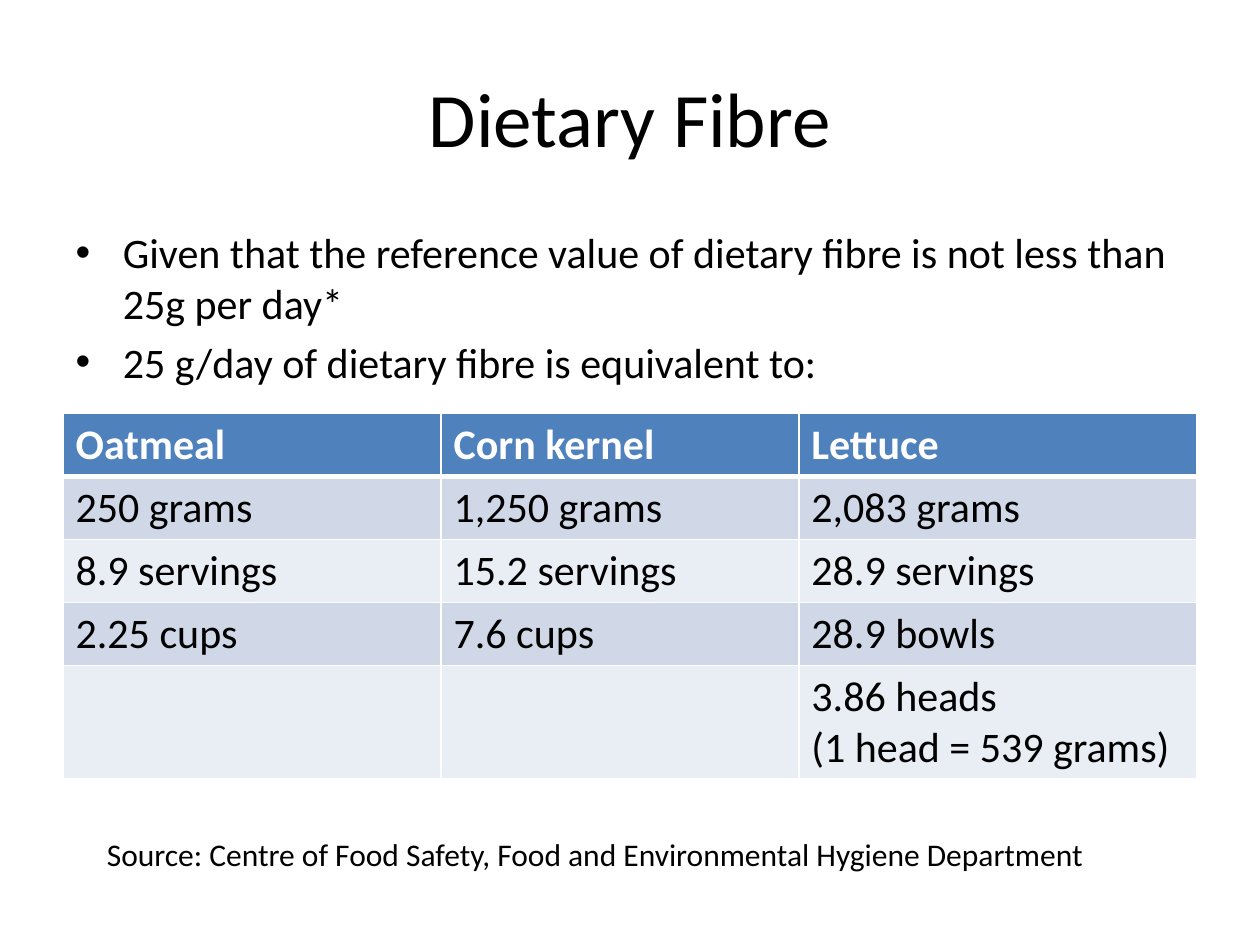
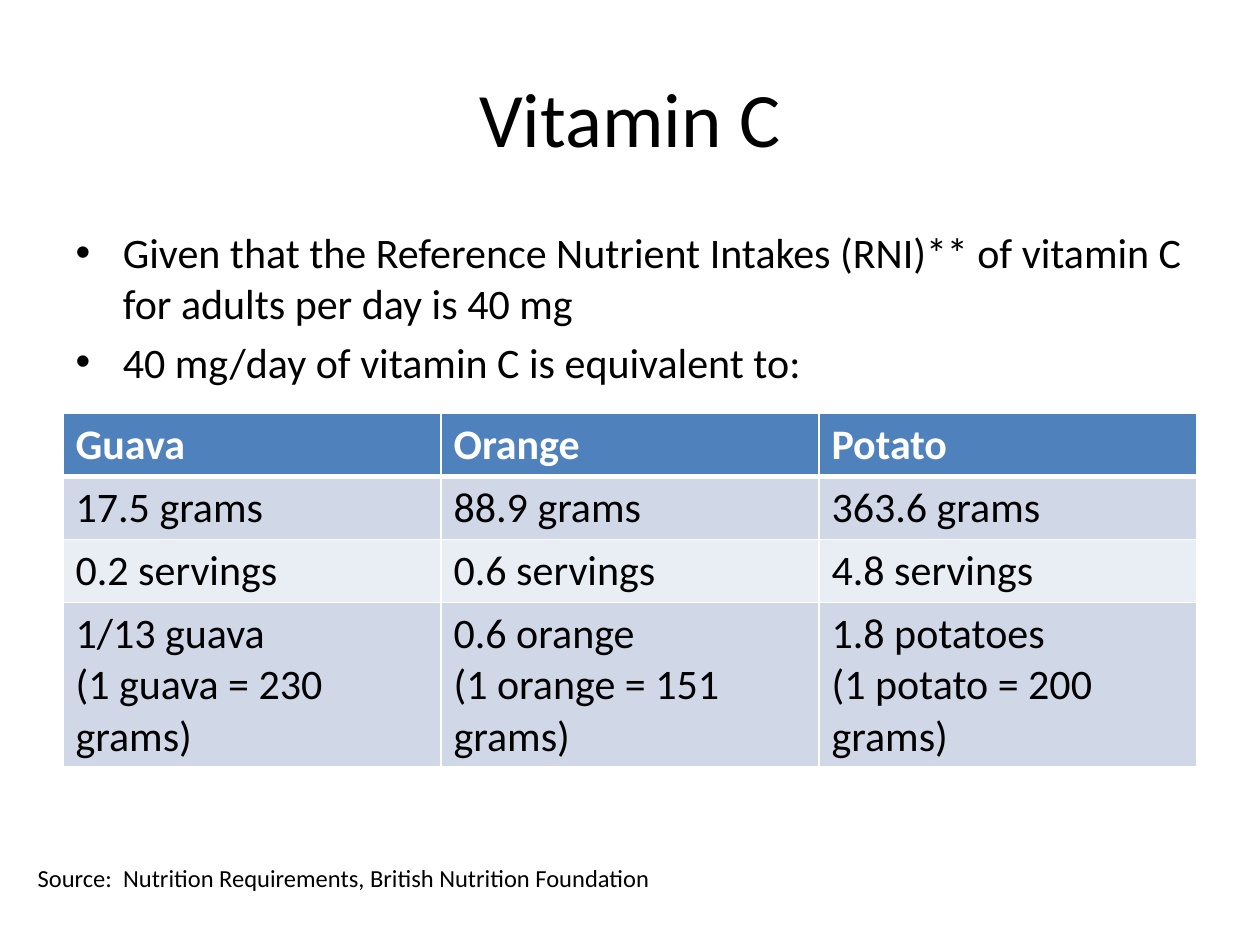
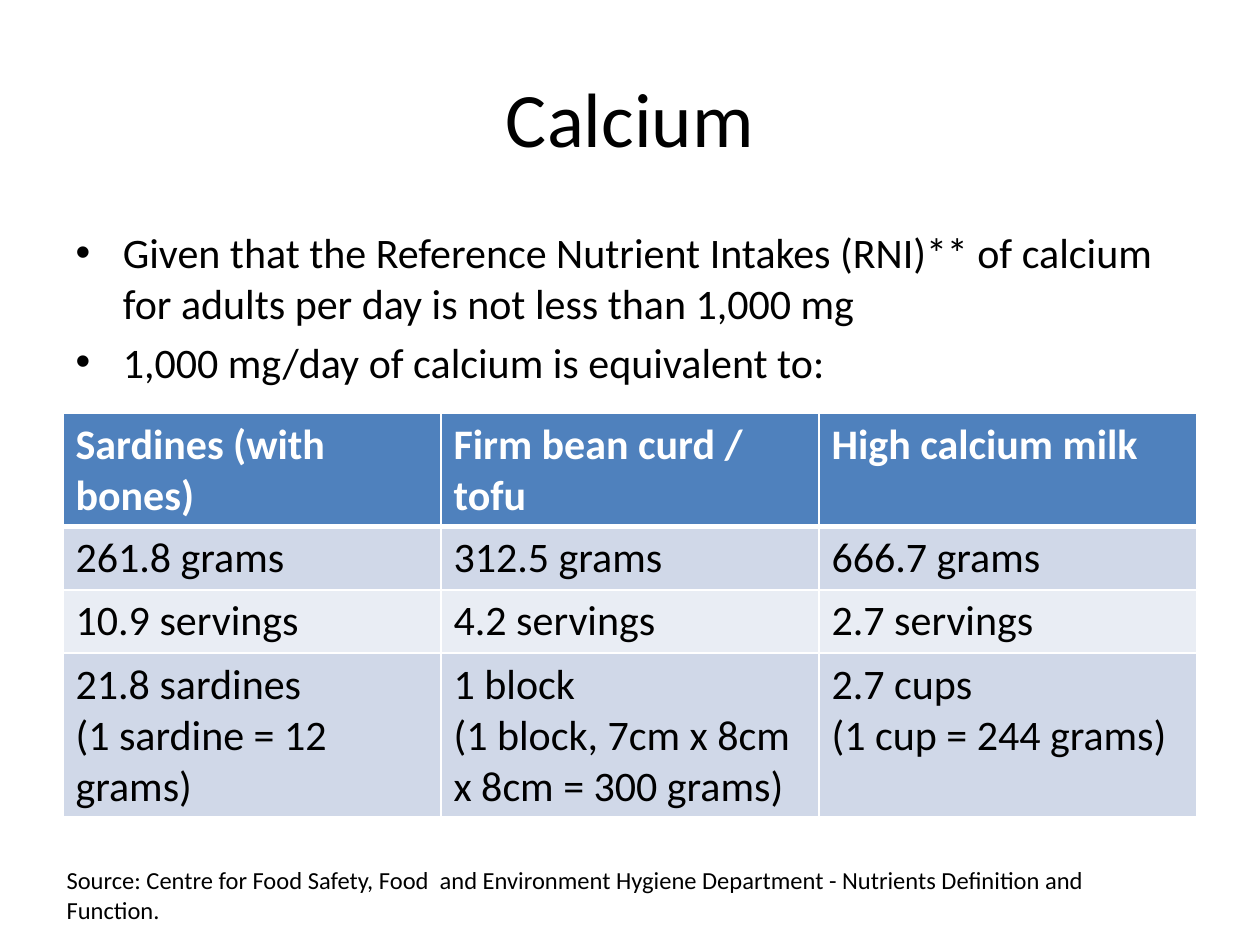
from lxml import etree
from pptx import Presentation
from pptx.dml.color import RGBColor
from pptx.enum.text import MSO_ANCHOR, MSO_AUTO_SIZE, PP_ALIGN
from pptx.oxml.ns import qn
from pptx.util import Pt

MIDDLE = MSO_ANCHOR.MIDDLE
CENTER = PP_ALIGN.CENTER
GROW = MSO_AUTO_SIZE.SHAPE_TO_FIT_TEXT

SLIDES = [
    {
        "title": "Dietary Fibre",
        "points": [
            "Given that the reference value of dietary fibre is not less than 25g per day*",
            "25 g/day of dietary fibre is equivalent to:",
        ],
        "table": [
            ("Oatmeal", "Corn kernel", "Lettuce"),
            ("250 grams", "1,250 grams", "2,083 grams"),
            ("8.9 servings", "15.2 servings", "28.9 servings"),
            ("2.25 cups", "7.6 cups", "28.9 bowls"),
            ("", "", "3.86 heads\n(1 head = 539 grams)"),
        ],
        "cols": (300, 284, 316),
        "high": 290,
        "source": "Source: Centre of Food Safety, Food and Environmental Hygiene Department",
        "box": (75, 658, 843, 40),
        "size": 18,
    },
    {
        "title": "Vitamin C",
        "points": [
            "Given that the Reference Nutrient Intakes (RNI)** of vitamin C for adults per day is 40 mg",
            "40 mg/day of vitamin C is equivalent to:",
        ],
        "table": [
            ("Guava", "Orange", "Potato"),
            ("17.5 grams", "88.9 grams", "363.6 grams"),
            ("0.2 servings", "0.6 servings", "4.8 servings"),
            ("1/13 guava \v(1 guava = 230 grams)", "0.6 orange \v(1 orange = 151 grams)",
             "1.8 potatoes\n(1 potato = 200 grams)"),
        ],
        "cols": (300, 300, 300),
        "high": 280,
        "source": "Source:  Nutrition Requirements, British Nutrition Foundation",
        "box": (20, 680, 921, 57),
        "size": 14,
    },
    {
        "title": "Calcium",
        "points": [
            "Given that the Reference Nutrient Intakes (RNI)** of calcium for adults per day "
            "is not less than 1,000 mg",
            "1,000 mg/day of calcium is equivalent to:",
        ],
        "table": [
            ("Sardines (with bones)", "Firm bean curd / tofu", "High calcium milk"),
            ("261.8 grams", "312.5 grams", "666.7 grams"),
            ("10.9 servings", "4.2 servings", "2.7 servings"),
            ("21.8 sardines \v(1 sardine = 12 grams)",
             "1 block \v(1 block, 7cm x 8cm x 8cm = 300 grams)",
             "2.7 cups\n(1 cup = 244 grams)"),
        ],
        "cols": (300, 300, 300),
        "high": 320,
        "source": "Source: Centre for Food Safety, Food  and Environment Hygiene Department"
                  " - Nutrients Definition and Function.",
        "box": (43, 682, 890, 57),
        "size": 14,
    },
]

PX = 9144
TITLE = (50, 30, 900, 125)
BODY = (50, 175, 900, 495)
LEFT, TOP, ROW = 50, 328, 41
BLACK, WHITE, HEAD = "000000", "FFFFFF", "4F81BD"
BANDS = ("E9EDF4", "D0D8E8")


def color(code):
    return RGBColor.from_string(code)


def place(shape, box):
    for name, val in zip(("left", "top", "width", "height"), box):
        setattr(shape, name, val * PX)


def write(frame, text, size, ink=BLACK, bold=False):
    frame.text = text
    look = {"name": "Calibri", "size": Pt(size), "bold": bold}
    for para in frame.paragraphs:
        for run in para.runs:
            for name, val in look.items():
                setattr(run.font, name, val)
            run.font.color.rgb = color(ink)


def edge(cell, base):
    """Draw white cell borders, with the bottom one base points wide."""
    props = cell._tc.get_or_add_tcPr()
    for side, wide in (("L", 1), ("R", 1), ("T", 1), ("B", base)):
        line = etree.SubElement(props, qn("a:ln" + side), w=str(Pt(wide)))
        fill = etree.SubElement(line, qn("a:solidFill"))
        etree.SubElement(fill, qn("a:srgbClr"), val=WHITE)


def add_grid(slide, rows, cols, high):
    size = [n * PX for n in (LEFT, TOP, sum(cols), ROW * len(rows))]
    shape = slide.shapes.add_table(len(rows), len(cols), *size)
    grid = shape.table
    for col, wide in zip(grid.columns, cols):
        col.width = wide * PX
    for r, row in enumerate(rows):
        top = r == 0
        for c, text in enumerate(row):
            cell = grid.cell(r, c)
            write(cell.text_frame, text, 24, WHITE if top else BLACK, top)
            # The rule under the header is also the top edge of the next row
            edge(cell, 3 if top else 1)
            if r == 1:
                cell._tc.tcPr.find(qn("a:lnT")).set("w", str(Pt(3)))
            cell.fill.solid()
            cell.fill.fore_color.rgb = color(HEAD if top else BANDS[r % 2])
    shape.height = high * PX


def add_source(slide, text, box, size):
    note = slide.shapes.add_textbox(*[n * PX for n in box])
    note.text_frame.word_wrap = True
    note.text_frame.auto_size = GROW
    write(note.text_frame, text, size)


def build(deck, data):
    slide = deck.slides.add_slide(deck.slide_layouts[1])
    title, body = slide.shapes.title, slide.placeholders[1]
    place(title, TITLE)
    write(title.text_frame, data["title"], 44)
    title.text_frame.vertical_anchor = MIDDLE
    title.text_frame.paragraphs[0].alignment = CENTER
    place(body, BODY)
    write(body.text_frame, "\n".join(data["points"]), 24)
    add_source(slide, data["source"], data["box"], data["size"])
    add_grid(slide, data["table"], data["cols"], data["high"])


def main():
    deck = Presentation()
    deck.slide_width, deck.slide_height = 1000 * PX, 750 * PX
    for data in SLIDES:
        build(deck, data)
    deck.save("out.pptx")


if __name__ == "__main__":
    main()
